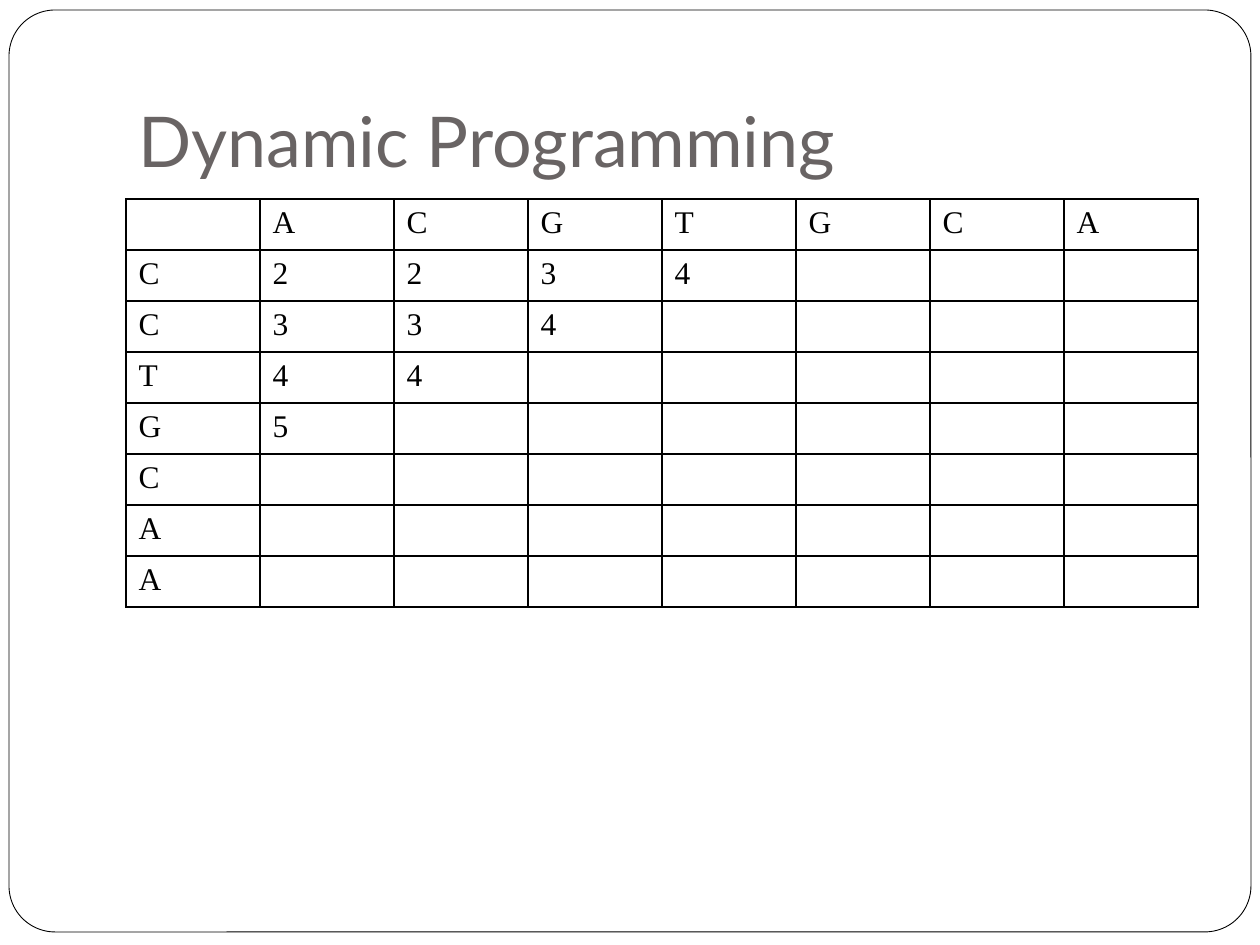
from lxml.etree import SubElement
from pptx import Presentation
from pptx.dml.color import RGBColor
from pptx.enum.shapes import MSO_SHAPE
from pptx.enum.text import MSO_ANCHOR, MSO_AUTO_SIZE, PP_ALIGN
from pptx.oxml.ns import qn
from pptx.util import Pt

PX = 914400 // 126
BLACK = RGBColor(0, 0, 0)
WHITE = RGBColor(255, 255, 255)
GRAY = RGBColor(0x69, 0x64, 0x64)

COLUMN_LETTERS = "ACGTGCA"
ROW_LETTERS = "CCTGCAA"
SCORES = ["2234", "334", "44", "5", "", "", ""]
COLUMN_WIDTH, ROW_HEIGHT = 134, 51


def set_borders(cell):
    properties = cell._tc.get_or_add_tcPr()
    for position, side in enumerate(("a:lnL", "a:lnR", "a:lnT", "a:lnB")):
        line = SubElement(properties, qn(side), w=str(Pt(1)))
        fill = SubElement(line, qn("a:solidFill"))
        SubElement(fill, qn("a:srgbClr"), val=str(BLACK))
        properties.insert(position, line)


presentation = Presentation()
presentation.slide_width = 1260 * PX
presentation.slide_height = 945 * PX
slide = presentation.slides.add_slide(presentation.slide_layouts[5])

frame = slide.shapes.add_shape(
    MSO_SHAPE.ROUNDED_RECTANGLE, 9 * PX, 10 * PX, 1242 * PX, 922 * PX
)
frame.adjustments[0] = 0.05
frame.shadow.inherit = False
frame.fill.solid()
frame.fill.fore_color.rgb = WHITE
frame.line.color.rgb = BLACK
frame.line.width = Pt(0.5)

title = slide.shapes.title
frame._element.addnext(title._element)
title.left, title.top = 126 * PX, 38 * PX
title.width, title.height = 1071 * PX, 157 * PX
title_frame = title.text_frame
title_frame.text = "Dynamic Programming"
title_frame.auto_size = MSO_AUTO_SIZE.NONE
title_frame.vertical_anchor = MSO_ANCHOR.BOTTOM
title_frame.margin_bottom = 13 * PX
paragraph = title_frame.paragraphs[0]
paragraph.alignment = PP_ALIGN.LEFT
paragraph.font.name = "Lato"
paragraph.font.size = Pt(40)
paragraph.font.color.rgb = GRAY

rows = [["", *COLUMN_LETTERS]]
for letter, scores in zip(ROW_LETTERS, SCORES):
    rows.append([letter, *scores.ljust(len(COLUMN_LETTERS))])

table = slide.shapes.add_table(
    len(rows), len(rows[0]), 126 * PX, 199 * PX,
    len(rows[0]) * COLUMN_WIDTH * PX, len(rows) * ROW_HEIGHT * PX,
).table
table.first_row = False
table.horz_banding = False

for row_index, values in enumerate(rows):
    for column_index, value in enumerate(values):
        cell = table.cell(row_index, column_index)
        cell.text = value.strip()
        cell.fill.background()
        set_borders(cell)
        paragraph = cell.text_frame.paragraphs[0]
        paragraph.font.name = "Times New Roman"
        paragraph.font.size = Pt(18)
        paragraph.font.color.rgb = BLACK

presentation.save("out.pptx")
